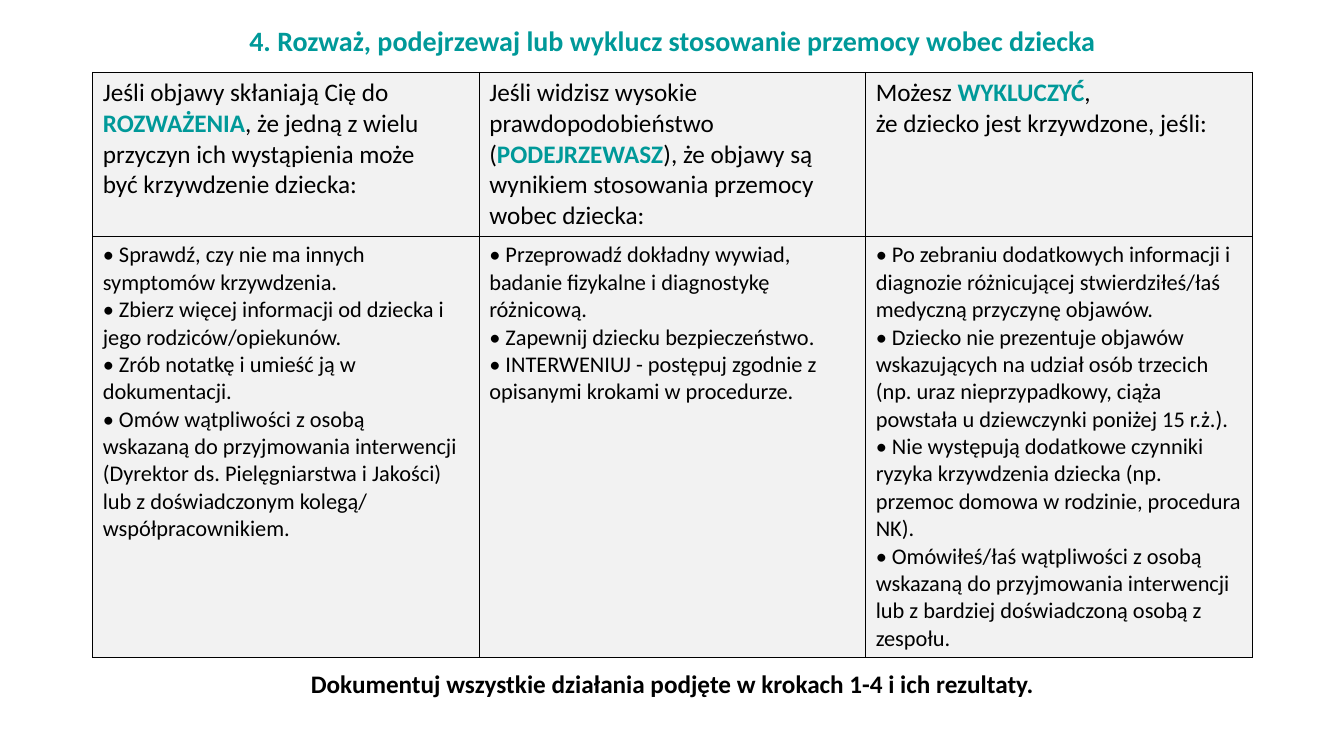
from lxml.etree import SubElement
from pptx import Presentation
from pptx.dml.color import RGBColor
from pptx.enum.text import MSO_ANCHOR, PP_ALIGN
from pptx.oxml.ns import qn
from pptx.util import Inches, Pt

TEAL = RGBColor(0x00, 0x99, 0x99)
BLACK = RGBColor(0x00, 0x00, 0x00)
GREY = RGBColor(0xF2, 0xF2, 0xF2)

WIDE, HIGH = 13.33, 7.5
LEFT, SPAN = 0.92, 11.5
ROWS = (1.62, 4.17)
SIZES = (18, 16)

TITLE = "4. Rozważ, podejrzewaj lub wyklucz stosowanie przemocy wobec dziecka"
NOTE = "Dokumentuj wszystkie działania podjęte w krokach 1-4 i ich rezultaty."

HEADS = (
    ("Jeśli objawy skłaniają Cię do",
     "*ROZWAŻENIA*, że jedną z wielu",
     "przyczyn ich wystąpienia może",
     "być krzywdzenie dziecka:"),
    ("Jeśli widzisz wysokie prawdopodobieństwo",
     "(*PODEJRZEWASZ*), że objawy są wynikiem stosowania przemocy wobec dziecka:"),
    ("Możesz *WYKLUCZYĆ*,",
     "że dziecko jest krzywdzone, jeśli:"),
)
STEPS = (
    ("• Sprawdź, czy nie ma innych",
     "symptomów krzywdzenia.",
     "• Zbierz więcej informacji od dziecka i jego rodziców/opiekunów.",
     "• Zrób notatkę i umieść ją w dokumentacji.",
     "• Omów wątpliwości z osobą",
     "wskazaną do przyjmowania interwencji (Dyrektor ds. Pielęgniarstwa i Jakości) "
     "lub z doświadczonym kolegą/ współpracownikiem."),
    ("• Przeprowadź dokładny wywiad, badanie fizykalne i diagnostykę różnicową.",
     "• Zapewnij dziecku bezpieczeństwo.",
     "• INTERWENIUJ - postępuj zgodnie z opisanymi krokami w procedurze."),
    ("• Po zebraniu dodatkowych informacji i diagnozie różnicującej "
     "stwierdziłeś/łaś medyczną przyczynę objawów.",
     "• Dziecko nie prezentuje objawów",
     "wskazujących na udział osób trzecich (np. uraz nieprzypadkowy, ciąża "
     "powstała u dziewczynki poniżej 15 r.ż.).",
     "• Nie występują dodatkowe czynniki ryzyka krzywdzenia dziecka (np. "
     "przemoc domowa w rodzinie, procedura NK).",
     "• Omówiłeś/łaś wątpliwości z osobą wskazaną do przyjmowania interwencji "
     "lub z bardziej doświadczoną osobą z zespołu."),
)


def apply(item, form):
    for key, value in form.items():
        setattr(item, key, value)


def add_run(para, text, size, color, bold):
    run = para.add_run()
    run.text = text
    apply(run.font, {"name": "Calibri", "size": Pt(size), "bold": bold})
    run.font.color.rgb = color


def place(shape, box):
    sides = ("left", "top", "width", "height")
    apply(shape, dict(zip(sides, map(Inches, box))))


def add_title(slide, box):
    shape = slide.shapes.title
    place(shape, box)
    apply(shape.text_frame, {"word_wrap": True, "vertical_anchor": MSO_ANCHOR.MIDDLE})
    para = shape.text_frame.paragraphs[0]
    apply(para, {"alignment": PP_ALIGN.CENTER, "line_spacing": 0.9})
    add_run(para, TITLE, 20, TEAL, True)


def add_edges(cell):
    props = cell._tc.get_or_add_tcPr()
    for side in ("a:lnL", "a:lnR", "a:lnT", "a:lnB"):
        line = SubElement(props, qn(side), w=str(Pt(1)))
        fill = SubElement(line, qn("a:solidFill"))
        SubElement(fill, qn("a:srgbClr"), val=str(BLACK))


def fill_cell(cell, lines, size):
    add_edges(cell)
    cell.fill.solid()
    cell.fill.fore_color.rgb = GREY
    frame = cell.text_frame
    for i, line in enumerate(lines):
        para = frame.add_paragraph() if i else frame.paragraphs[0]
        for j, part in enumerate(line.split("*")):
            if part:
                key = j % 2 == 1
                add_run(para, part, size, TEAL if key else BLACK, key)


def add_grid(slide, box):
    shape = slide.shapes.add_table(len(ROWS), len(HEADS), *map(Inches, box))
    table = shape.table
    apply(table, {"first_row": False, "horz_banding": False})
    for col in table.columns:
        col.width = Inches(box[2] / len(HEADS))
    for row, high, size, texts in zip(table.rows, ROWS, SIZES, (HEADS, STEPS)):
        row.height = Inches(high)
        for cell, lines in zip(row.cells, texts):
            fill_cell(cell, lines, size)


def add_note(slide, box):
    frame = slide.shapes.add_textbox(*map(Inches, box)).text_frame
    frame.word_wrap = True
    para = frame.paragraphs[0]
    para.alignment = PP_ALIGN.CENTER
    add_run(para, NOTE, 18, BLACK, True)


def main():
    deck = Presentation()
    apply(deck, {"slide_width": Inches(WIDE), "slide_height": Inches(HIGH)})
    slide = deck.slides.add_slide(deck.slide_layouts[5])
    add_title(slide, (LEFT, 0, SPAN, 0.85))
    add_grid(slide, (LEFT, 0.72, SPAN, sum(ROWS)))
    add_note(slide, (LEFT, 6.58, SPAN, 0.4))
    deck.save("out.pptx")


if __name__ == "__main__":
    main()
